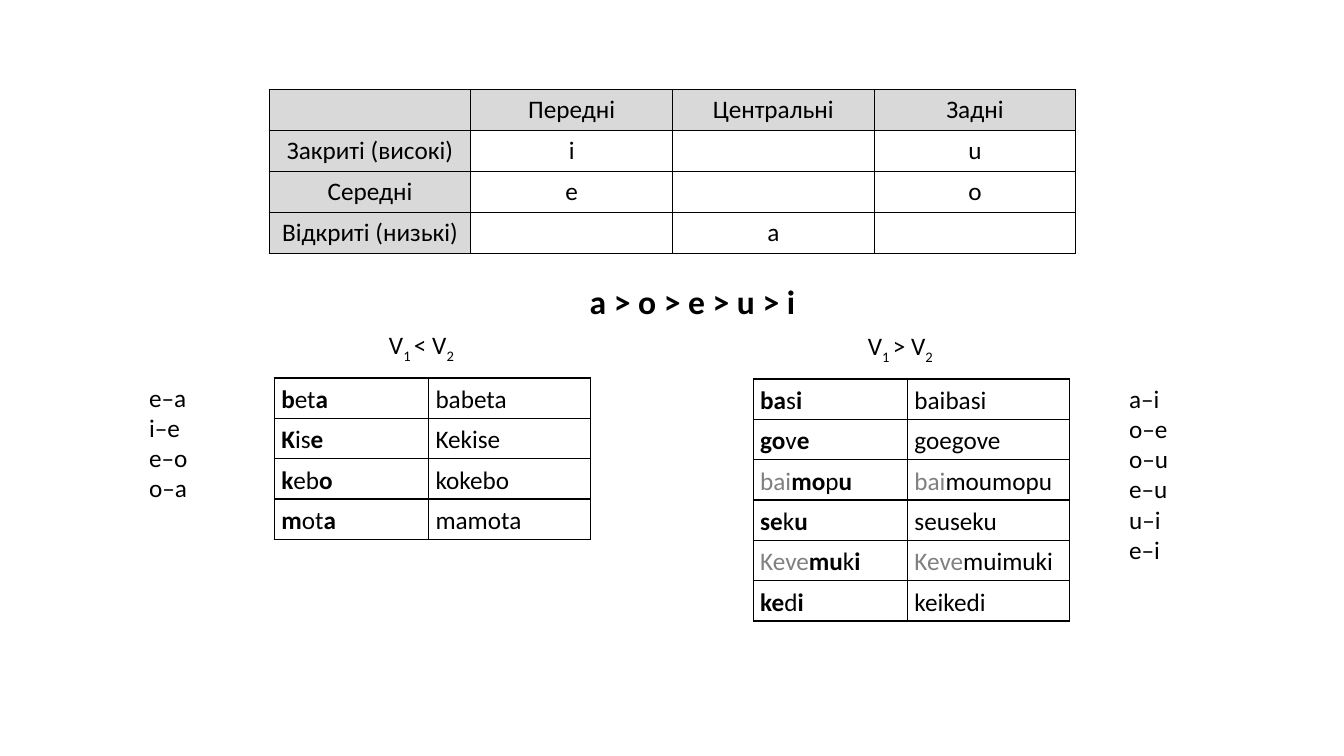
from pptx import Presentation
from pptx import util as u
from pptx.dml import color
from pptx.enum import text
from pptx.oxml import parse_xml
from pptx.oxml import ns

BLACK, GREY, HEADER = "000000", "808080", "D9D9D9"
ROW_HEIGHT = 0.4
MARKS = {"*": {"bold": True}, "~": {"color": GREY}, "_": {"baseline": "-25000"}}

VOWELS = [
    ["", "Передні", "Центральні", "Задні"],
    ["Закриті (високі)", "i", "", "u"],
    ["Середні", "e", "", "o"],
    ["Відкриті (низькі)", "", "a", ""],
]
RISING = {
    "rule": "V|_1 |< V|_2",
    "words": [
        ["*b|et|*a", "babeta"],
        ["*K|is|*e", "Kekise"],
        ["*k|eb|*o", "kokebo"],
        ["*m|ot|*a", "mamota"],
    ],
    "pairs": ["e–a", "i–e", "e–o", "o–a"],
}
FALLING = {
    "rule": "V|_1 |> V|_2",
    "words": [
        ["*ba|s|*i", "baibasi"],
        ["*go|v|*e", "goegove"],
        ["~bai|*mo|p|*u", "~bai|moumopu"],
        ["*se|k|*u", "seuseku"],
        ["~Keve|*mu|k|*i", "~Keve|muimuki"],
        ["*ke|d|*i", "keikedi"],
    ],
    "pairs": ["a–i", "o–e", "o–u", "e–u", "u–i", "e–i"],
}


def rgb(value):
    return color.RGBColor.from_string(value)


def set_all(target, values):
    for name, value in values.items():
        setattr(target, name, value)


def write(paragraph, marked, size=18):
    for part in filter(None, marked.split("|")):
        style = MARKS.get(part[0], {})
        run = paragraph.add_run()
        run.text = part[1:] if style else part
        set_all(run.font, {"name": "Calibri", "size": u.Pt(size),
                           "bold": style.get("bold", False)})
        run.font.color.rgb = rgb(style.get("color", BLACK))
        if "baseline" in style:
            run.font._element.set("baseline", style["baseline"])


def add_borders(cell):
    properties = cell._tc.get_or_add_tcPr()
    for side in ("lnL", "lnR", "lnT", "lnB"):
        properties.append(parse_xml(
            f'<a:{side} {ns.nsdecls("a")} w="12700"><a:solidFill>'
            f'<a:srgbClr val="{BLACK}"/></a:solidFill></a:{side}>'))


def add_grid(slide, left, top, widths, rows, cell_format, paragraph_format, headed=False):
    grid = slide.shapes.add_table(
        len(rows), len(widths), u.Inches(left), u.Inches(top),
        u.Inches(sum(widths)), u.Inches(ROW_HEIGHT * len(rows))).table
    set_all(grid, {"first_row": False, "horz_banding": False})
    for column, width in zip(grid.columns, widths):
        column.width = u.Inches(width)
    for i, row in enumerate(rows):
        grid.rows[i].height = u.Inches(ROW_HEIGHT)
        for j, entry in enumerate(row):
            cell = grid.cell(i, j)
            add_borders(cell)
            if headed and 0 in (i, j):
                cell.fill.solid()
                cell.fill.fore_color.rgb = rgb(HEADER)
            else:
                cell.fill.background()
            set_all(cell, cell_format)
            paragraph = cell.text_frame.paragraphs[0]
            set_all(paragraph, paragraph_format)
            write(paragraph, entry)


def add_lines(slide, left, top, width, height, lines, size=18, wrap=True):
    frame = slide.shapes.add_textbox(*map(u.Inches, (left, top, width, height))).text_frame
    set_all(frame, {"word_wrap": wrap, "auto_size": text.MSO_AUTO_SIZE.SHAPE_TO_FIT_TEXT})
    for i, line in enumerate(lines):
        write(frame.add_paragraph() if i else frame.paragraphs[0], line, size)


def add_vowel_chart(slide, left, top, width):
    add_grid(slide, left, top, [width / 4] * 4, VOWELS,
             {"vertical_anchor": text.MSO_ANCHOR.MIDDLE},
             {"alignment": text.PP_ALIGN.CENTER}, headed=True)


def add_reduplication(slide, left, top, group, pairs_left):
    add_lines(slide, left + 1.04, top - 0.53, 0.96, 0.4, [group["rule"]], wrap=False)
    add_grid(slide, left, top, [1.53, 1.61], group["words"],
             {"margin_left": u.Inches(0.07), "margin_right": u.Inches(0.07),
              "margin_top": u.Inches(0.02), "margin_bottom": u.Inches(0.02)},
             {"line_spacing": 1.15, "space_after": u.Pt(10)})
    pairs = group["pairs"]
    add_lines(slide, pairs_left, top - 0.01, 0.86, 0.1 + 0.3 * len(pairs), pairs)


def main():
    deck = Presentation()
    set_all(deck, {"slide_width": u.Inches(13.33), "slide_height": u.Inches(7.5)})
    slide = deck.slides.add_slide(deck.slide_layouts[6])
    add_vowel_chart(slide, 2.67, 0.89, 8)
    add_lines(slide, 5.75, 2.74, 2.24, 0.5, ["*a > o > e > u > i"], size=24, wrap=False)
    add_reduplication(slide, 2.72, 3.75, RISING, 1.38)
    add_reduplication(slide, 7.47, 3.76, FALLING, 11.1)
    deck.save("out.pptx")


if __name__ == "__main__":
    main()
